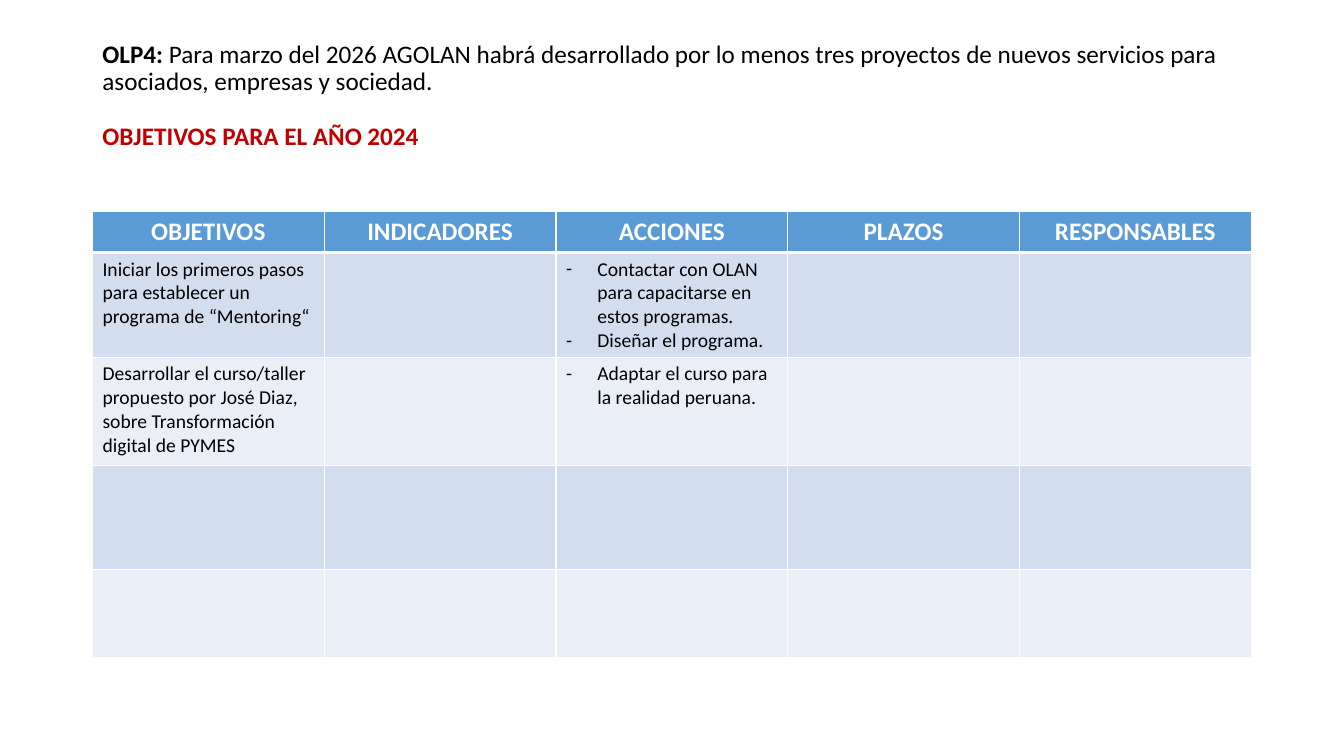
import pptx
import pptx.dml.color
import pptx.enum.text
import pptx.oxml.ns
import pptx.util
from lxml import etree

Cm, Pt = pptx.util.Cm, pptx.util.Pt
RGB = pptx.dml.color.RGBColor.from_string
ALIGN = pptx.enum.text.PP_ALIGN
qn = pptx.oxml.ns.qn

THEME = {
    "font": "Calibri", "large": Pt(18), "small": Pt(14),
    "text": "000000", "accent": "C00000", "white": "FFFFFF",
    "header": "5B9BD5", "bands": ["D2DEEF", "EAEFF7"],
}


def add_run(p, text, size, color, bold=False):
    r = p.add_run()
    r.text = text
    for name, value in {"name": THEME["font"], "size": size, "bold": bold}.items():
        setattr(r.font, name, value)
    r.font.color.rgb = RGB(color)


def style_cell(cell, color, bottom):
    """Draw the borders, then fill the cell."""
    tcPr = cell._tc.get_or_add_tcPr()
    for side, width in {"L": 1, "R": 1, "T": 1, "B": bottom}.items():
        ln = etree.SubElement(tcPr, qn(f"a:ln{side}"), w=str(Pt(width)))
        fill = etree.SubElement(ln, qn("a:solidFill"))
        etree.SubElement(fill, qn("a:srgbClr"), val=THEME["white"])
    cell.fill.solid()
    cell.fill.fore_color.rgb = RGB(color)


prs = pptx.Presentation()
prs.slide_width, prs.slide_height = Cm(33.87), Cm(19.05)
s = prs.slides.add_slide(prs.slide_layouts[6])

# Heading
sp = s.shapes.add_textbox(Cm(2.33), Cm(1.27), Cm(29.21), Cm(2.31))
tf = sp.text_frame
tf.word_wrap = True
tf.vertical_anchor = pptx.enum.text.MSO_ANCHOR.MIDDLE
p = tf.paragraphs[0]
p.line_spacing = 0.9
add_run(p, "OLP4: ", THEME["large"], THEME["text"], True)
add_run(p, "Para marzo del 2026 AGOLAN habrá desarrollado por lo menos tres proyectos "
           "de nuevos servicios para asociados, empresas y sociedad.",
        THEME["large"], THEME["text"])
p = tf.add_paragraph()
for name, value in {"line_spacing": 0.9, "space_before": Pt(20)}.items():
    setattr(p, name, value)
add_run(p, "OBJETIVOS PARA EL AÑO 2024", THEME["large"], THEME["accent"], True)

# Table content: a list in a cell is bulleted
headers = ["OBJETIVOS", "INDICADORES", "ACCIONES", "PLAZOS", "RESPONSABLES"]
goals = [
    ("Iniciar los primeros pasos para establecer un programa de “Mentoring“",
     ["Contactar con OLAN para capacitarse en estos programas.", "Diseñar el programa."]),
    ("Desarrollar el curso/taller propuesto por José Diaz, "
     "sobre Transformación digital de PYMES",
     ["Adaptar el curso para la realidad peruana."]),
]
heights = [1.03, 2.64, 2.74, 2.62, 2.22]

# Table grid
table = s.shapes.add_table(len(heights), len(headers), Cm(2.33), Cm(5.33),
                           Cm(29.21), Cm(sum(heights))).table
for col in table.columns:
    col.width = Cm(5.84)
for i, (row, height) in enumerate(zip(table.rows, heights)):
    row.height = Cm(height)
    for cell in row.cells:
        color = THEME["bands"][(i - 1) % 2] if i else THEME["header"]
        style_cell(cell, color, 1 if i else 3)

# Header row
for j, header in enumerate(headers):
    p = table.cell(0, j).text_frame.paragraphs[0]
    p.alignment = ALIGN.CENTER
    add_run(p, header, THEME["large"], THEME["white"], True)

# Goals and their actions
for i, (goal, actions) in enumerate(goals, 1):
    add_run(table.cell(i, 0).text_frame.paragraphs[0], goal, THEME["small"], THEME["text"])
    tf = table.cell(i, 2).text_frame
    for k, action in enumerate(actions):
        p = tf.add_paragraph() if k else tf.paragraphs[0]
        pPr = p._p.get_or_add_pPr()
        for name, value in {"marL": Cm(0.79), "indent": -Cm(0.79)}.items():
            pPr.set(name, str(value))
        etree.SubElement(pPr, qn("a:buFont"), typeface=THEME["font"])
        etree.SubElement(pPr, qn("a:buChar"), char="-")
        add_run(p, action, THEME["small"], THEME["text"])

prs.save("out.pptx")
